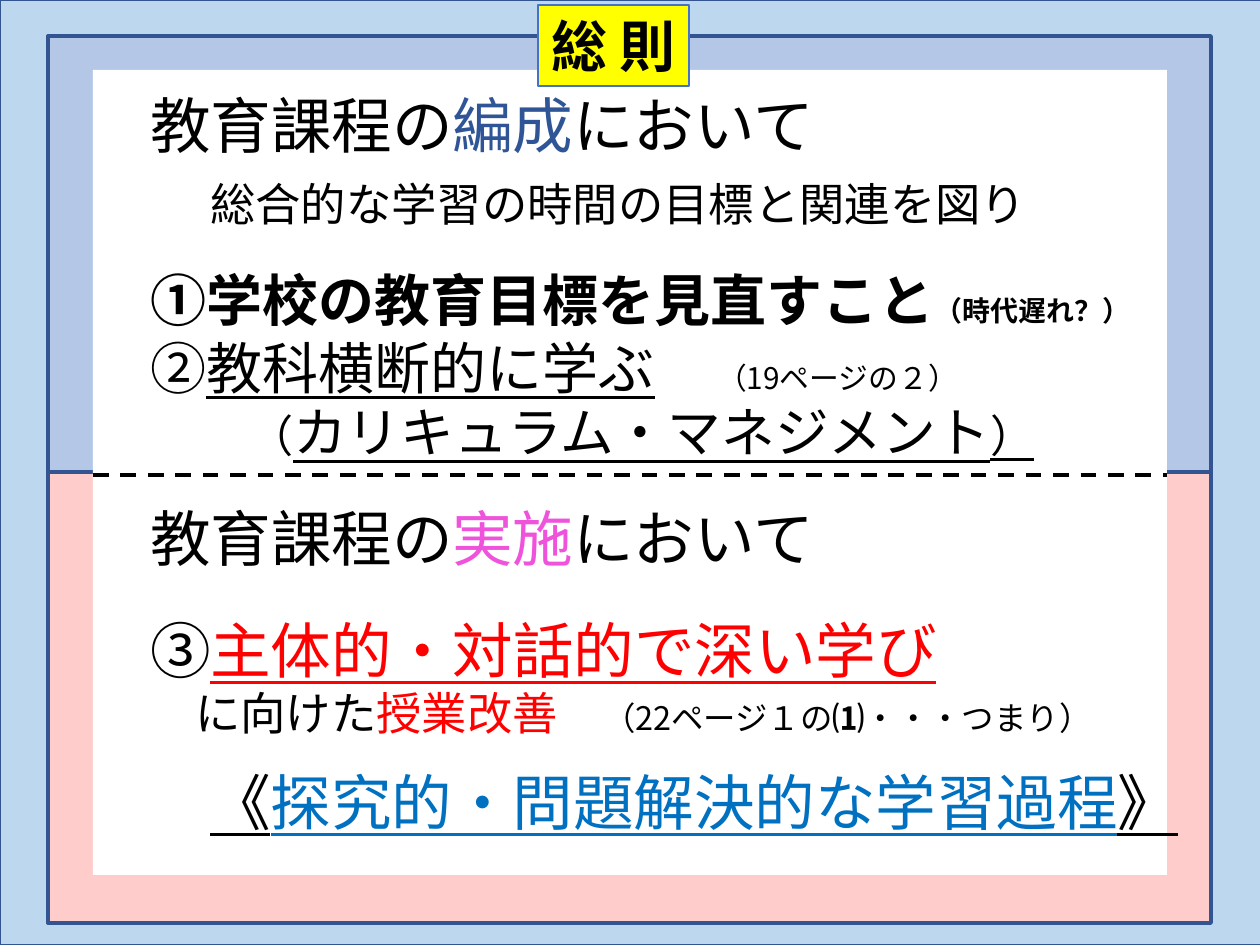
"""Build the general-provisions slide on organising and implementing the curriculum."""
from dataclasses import dataclass

from lxml import etree
from pptx import Presentation
from pptx.dml.color import RGBColor
from pptx.enum.dml import MSO_LINE
from pptx.enum.shapes import MSO_CONNECTOR, MSO_SHAPE
from pptx.enum.text import MSO_ANCHOR, MSO_AUTO_SIZE, PP_ALIGN
from pptx.oxml.ns import qn
from pptx.util import Emu, Pt

RECTANGLE = MSO_SHAPE.RECTANGLE
STRAIGHT = MSO_CONNECTOR.STRAIGHT
DASH = MSO_LINE.DASH
CENTER = PP_ALIGN.CENTER
MIDDLE, TOP = MSO_ANCHOR.MIDDLE, MSO_ANCHOR.TOP
NO_AUTOFIT = MSO_AUTO_SIZE.NONE
PX = 914400 // 126
PX_PER_PT = 1.75
DESCENT, LINE_FACTOR = 0.288, 1.15


@dataclass(frozen=True)
class Theme:
    body_font: str = "Noto Sans CJK JP"
    title_font: str = "Calibri"
    black: str = "000000"
    white: str = "FFFFFF"
    sky: str = "BDD7EE"
    pink: str = "FFCCCC"
    periwinkle: str = "B4C7E7"
    navy: str = "325491"
    yellow: str = "FFFF00"
    title_line: str = "4472C4"
    organise: str = "2F5597"
    implement: str = "EF53DC"
    red: str = "FF0000"
    blue: str = "0070C0"
    heading: float = 34.6
    point: float = 32
    curriculum: float = 30.7
    detail: float = 25.9
    bracket: float = 25.2
    remark: float = 18.5
    page: float = 17
    aside: float = 16


T = Theme()

TITLE = "総 則"
TITLE_BOX = (538, 5, 151, 81)
PANELS = [
    ((0, 0, 1262, 945), T.sky, T.navy, 1),
    ((48, 472, 1163, 451), T.pink, T.navy, 2.25),
    ((48, 36, 1163, 436), T.periwinkle, T.navy, 2.25),
    ((93, 70, 1074, 805), T.white, None, 0),
]
DIVIDER = (93, 475, 1167, 475)
BODY_BOX = (137, 5, 1066, 842)
BODY_INSET_LEFT, BODY_INSET_TOP = 13, 86
PAGE_TAB = 617

# baseline, indent, runs of (text, size, colour, style): b bold, u underlined
LINES = [
    (143, 0, [("教育課程の", T.heading, T.black, ""),
              ("編成", T.heading, T.organise, ""),
              ("において", T.heading, T.black, "")]),
    (217, 60, [("総合的な学習の時間の目標と関連を図り", T.detail, T.black, "")]),
    (316, 0, [("①学校の教育目標を見直すこと", T.point, T.black, "b"),
              ("（時代遅れ？）", T.aside, T.black, "b")]),
    (384, 0, [("②", T.point, T.black, ""),
              ("教科横断的に学ぶ", T.point, T.black, "u"),
              ("\t（19ページの２）", T.page, T.black, "")]),
    (448, 99, [("（", T.bracket, T.black, ""),
               ("カリキュラム・マネジメント", T.curriculum, T.black, "u"),
               ("）", T.bracket, T.black, "u")]),
    (556, 0, [("教育課程の", T.heading, T.black, ""),
              ("実施", T.heading, T.implement, ""),
              ("において", T.heading, T.black, "")]),
    (668, 0, [("③", T.heading, T.black, ""),
              ("主体的・対話的で深い学び", T.heading, T.red, "u")]),
    (726, 45, [("に向けた", T.detail, T.black, ""),
               ("授業改善　", T.detail, T.red, ""),
               ("（22ページ１の", T.remark, T.black, ""),
               ("⑴", T.remark, T.black, "b"),
               ("・・・つまり）", T.remark, T.black, "")]),
    (820, 60, [("《", T.heading, T.black, "u"),
               ("探究的・問題解決的な学習過程", T.heading, T.blue, "u"),
               ("》", T.heading, T.black, "u")]),
]


def px(*lengths):
    return [Emu(round(length * PX)) for length in lengths]


def paint(shape, fill, line, width):
    shape.fill.solid()
    shape.fill.fore_color.rgb = RGBColor.from_string(fill)
    if line:
        shape.line.color.rgb = RGBColor.from_string(line)
        shape.line.width = Pt(width)
    else:
        shape.line.fill.background()


def add_run(paragraph, text, size, colour, style, font):
    run = paragraph.add_run()
    run.text = text
    run.font.name = font
    run.font.size = Pt(size)
    run.font.bold = "b" in style
    run.font.underline = "u" in style
    run.font.color.rgb = RGBColor.from_string(colour)
    east_asian = etree.SubElement(run.font._element, qn("a:ea"))
    east_asian.set("typeface", T.body_font)


def add_panels(slide):
    for box, fill, line, width in PANELS:
        panel = slide.shapes.add_shape(RECTANGLE, *px(*box))
        panel.shadow.inherit = False
        paint(panel, fill, line, width)


def add_body(slide):
    frame = slide.shapes.add_textbox(*px(*BODY_BOX)).text_frame
    frame.word_wrap = False
    frame.auto_size = NO_AUTOFIT
    frame.vertical_anchor = TOP
    frame.margin_left, frame.margin_top = px(BODY_INSET_LEFT, BODY_INSET_TOP)
    previous_bottom = BODY_BOX[1] + BODY_INSET_TOP
    for index, (baseline, indent, runs) in enumerate(LINES):
        paragraph = frame.add_paragraph() if index else frame.paragraphs[0]
        size = max(run[1] for run in runs)
        bottom = baseline + DESCENT * size * PX_PER_PT
        height = LINE_FACTOR * size
        gap = (bottom - previous_bottom) / PX_PER_PT - height
        paragraph.line_spacing = Pt(round(height, 1))
        paragraph.space_before = Pt(max(0, round(gap, 1)))
        previous_bottom = bottom
        properties = paragraph._p.get_or_add_pPr()
        properties.set("marL", str(indent * PX))
        properties.set("indent", "0")
        if any("\t" in run[0] for run in runs):
            stops = etree.SubElement(properties, qn("a:tabLst"))
            etree.SubElement(stops, qn("a:tab"), pos=str(PAGE_TAB * PX), algn="l")
        for run in runs:
            add_run(paragraph, *run, T.body_font)


def add_divider(slide):
    divider = slide.shapes.add_connector(STRAIGHT, *px(*DIVIDER))
    divider.line.color.rgb = RGBColor.from_string(T.black)
    divider.line.width = Pt(2.25)
    divider.line.dash_style = DASH
    etree.SubElement(divider._element.spPr, qn("a:effectLst"))


def place_title(slide):
    title = slide.shapes.title
    title.left, title.top, title.width, title.height = px(*TITLE_BOX)
    paint(title, T.yellow, T.title_line, 0.75)
    frame = title.text_frame
    frame.word_wrap = False
    frame.auto_size = NO_AUTOFIT
    frame.vertical_anchor = MIDDLE
    frame.paragraphs[0].alignment = CENTER
    add_run(frame.paragraphs[0], TITLE, T.point, T.black, "b", T.title_font)
    slide.shapes.element.append(title.element)


def main():
    deck = Presentation()
    deck.slide_width, deck.slide_height = px(1260, 945)
    slide = deck.slides.add_slide(deck.slide_layouts[5])
    add_panels(slide)
    add_body(slide)
    add_divider(slide)
    place_title(slide)
    deck.save("out.pptx")


if __name__ == "__main__":
    main()
